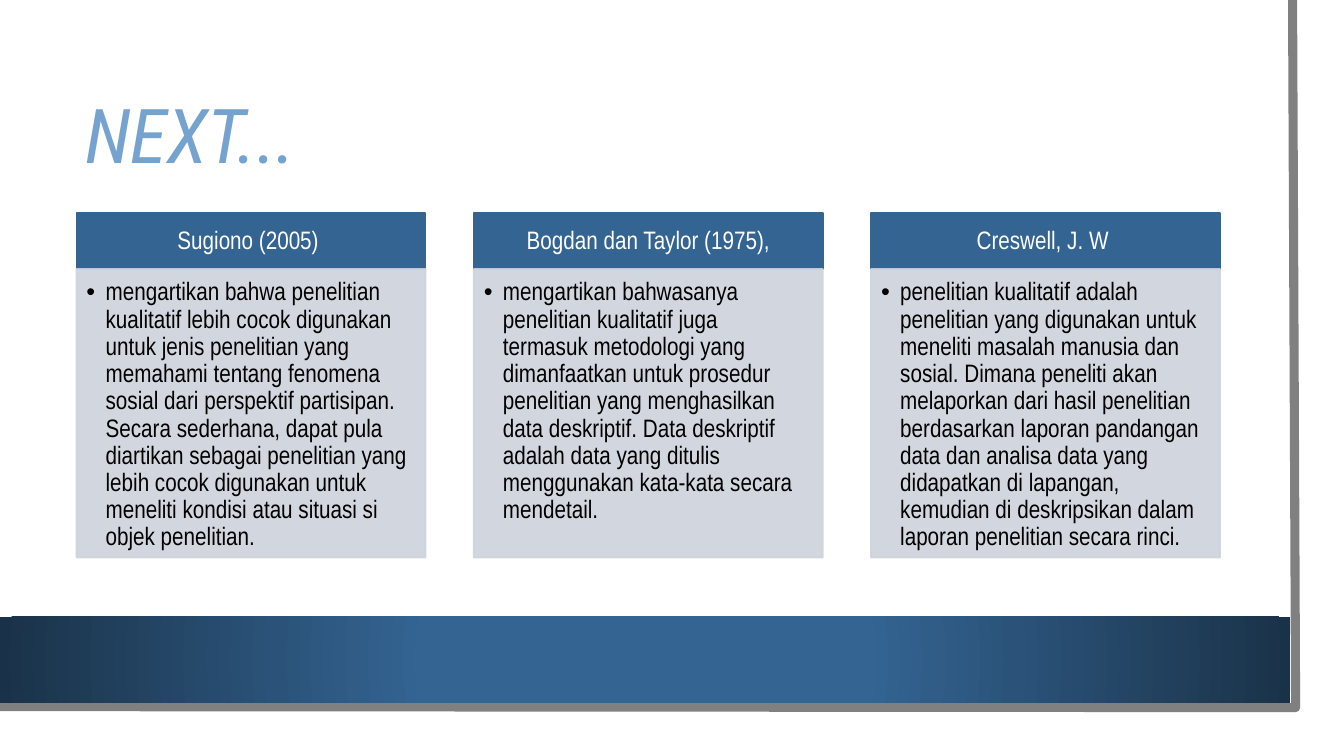
"""Builds a slide comparing three definitions of qualitative research."""
import pptx
import pptx.util
import pptx.dml.color
import pptx.enum.shapes
import pptx.enum.text
import pptx.oxml
import pptx.oxml.ns
import lxml.etree

PX = 9144
RGB = pptx.dml.color.RGBColor
WHITE = RGB(0xFF, 0xFF, 0xFF)
BLACK = RGB(0x00, 0x00, 0x00)
GRAY = RGB(0x80, 0x80, 0x80)
BLUE = RGB(0x34, 0x64, 0x92)
NAVY = RGB(0x1A, 0x32, 0x49)
SKY = RGB(0x75, 0xA2, 0xCE)
PALE = RGB(0xCE, 0xD3, 0xDC)
RECTANGLE = pptx.enum.shapes.MSO_SHAPE.RECTANGLE
LEFT = pptx.enum.text.PP_ALIGN.LEFT
CENTER = pptx.enum.text.PP_ALIGN.CENTER
TOP = pptx.enum.text.MSO_ANCHOR.TOP
MIDDLE = pptx.enum.text.MSO_ANCHOR.MIDDLE
qn = pptx.oxml.ns.qn


def write(shape, text, *, font, size, color, align=LEFT, anchor=MIDDLE,
          insets=(10, 5, 10, 5), italic=False, bullet_indent=0):
    frame = shape.text_frame
    frame.word_wrap = True
    frame.vertical_anchor = anchor
    (frame.margin_left, frame.margin_top,
     frame.margin_right, frame.margin_bottom) = [inset * PX for inset in insets]
    paragraph = frame.paragraphs[0]
    paragraph.alignment = align
    paragraph.line_spacing = 0.9
    if bullet_indent:
        properties = paragraph._p.get_or_add_pPr()
        properties.set("marL", str(bullet_indent * PX))
        properties.set("indent", str(-bullet_indent * PX))
        lxml.etree.SubElement(properties, qn("a:buFont")).set("typeface", "Arial")
        lxml.etree.SubElement(properties, qn("a:buChar")).set("char", "•")
    run = paragraph.add_run()
    run.text = text
    run.font.name = font
    run.font.size = pptx.util.Pt(size)
    run.font.italic = italic
    run.font.color.rgb = color


def panel(left, top, width, height, fill, line=None, opacity=100):
    shape = slide.shapes.add_shape(
        RECTANGLE, left * PX, top * PX, width * PX, height * PX)
    shape.shadow.inherit = False
    shape.fill.solid()
    shape.fill.fore_color.rgb = fill
    if line is None:
        shape.line.fill.background()
    else:
        shape.line.color.rgb = line
        shape.line.width = pptx.util.Pt(1.5)
    if opacity < 100:
        for color in shape._element.spPr.iter(qn("a:srgbClr")):
            lxml.etree.SubElement(color, qn("a:alpha")).set("val", str(opacity * 1000))
    return shape


deck = pptx.Presentation()
deck.slide_width = 1333 * PX
deck.slide_height = 750 * PX
slide = deck.slides.add_slide(deck.slide_layouts[6])

panel(0, 0, 1310, 727, WHITE)

edge_path = slide.shapes.build_freeform(1282, 0, scale=PX)
edge_path.add_line_segments([(1285, 702), (-3, 701)], close=False)
page_edge = edge_path.convert_to_shape()
page_edge.shadow.inherit = False
page_edge.fill.background()
page_edge.line.color.rgb = GRAY
page_edge.line.width = pptx.util.Pt(6.5)

footer_band = panel(0, 612, 1280, 85, BLUE)
footer_band.fill.gradient()
for stop, position, color in zip(footer_band.fill.gradient_stops, (0.34, 1), (BLUE, NAVY)):
    stop.position = position
    stop.color.rgb = color
gradient = footer_band._element.spPr.find(qn("a:gradFill"))
circle = lxml.etree.Element(qn("a:path"), {"path": "circle"})
lxml.etree.SubElement(circle, qn("a:fillToRect"), dict.fromkeys("ltrb", "50000"))
gradient.replace(gradient.find(qn("a:lin")), circle)

title = slide.shapes.add_textbox(75 * PX, 75 * PX, 1137 * PX, 126 * PX)
write(title, "NEXT...", font="Roboto Condensed", size=54, color=SKY, italic=True)

definitions = [
    ("Sugiono (2005) ",
     "mengartikan bahwa penelitian kualitatif lebih cocok digunakan untuk jenis "
     "penelitian yang memahami tentang fenomena sosial dari perspektif partisipan. "
     "Secara sederhana, dapat pula diartikan sebagai penelitian yang lebih cocok "
     "digunakan untuk meneliti kondisi atau situasi si objek penelitian. "),
    ("Bogdan dan Taylor (1975),",
     "mengartikan bahwasanya penelitian kualitatif juga termasuk metodologi yang "
     "dimanfaatkan untuk prosedur penelitian yang menghasilkan data deskriptif. "
     "Data deskriptif adalah data yang ditulis menggunakan kata-kata secara mendetail. "),
    ("Creswell, J. W ",
     "penelitian kualitatif adalah penelitian yang digunakan untuk meneliti masalah "
     "manusia dan sosial. Dimana peneliti akan melaporkan dari hasil penelitian "
     "berdasarkan laporan pandangan data dan analisa data yang didapatkan di lapangan, "
     "kemudian di deskripsikan dalam laporan penelitian secara rinci. "),
]
for column, (author, definition) in enumerate(definitions):
    left = 76 + column * 394
    write(panel(left, 211, 346, 56, BLUE, BLUE), author, font="Arial Narrow",
          size=18, color=WHITE, align=CENTER, insets=(14, 8, 14, 8))
    write(panel(left, 267, 346, 286, PALE, PALE, opacity=90), definition,
          font="Arial Narrow", size=18, color=BLACK, anchor=TOP,
          insets=(10, 10, 14, 16), bullet_indent=19)

deck.save("out.pptx")
